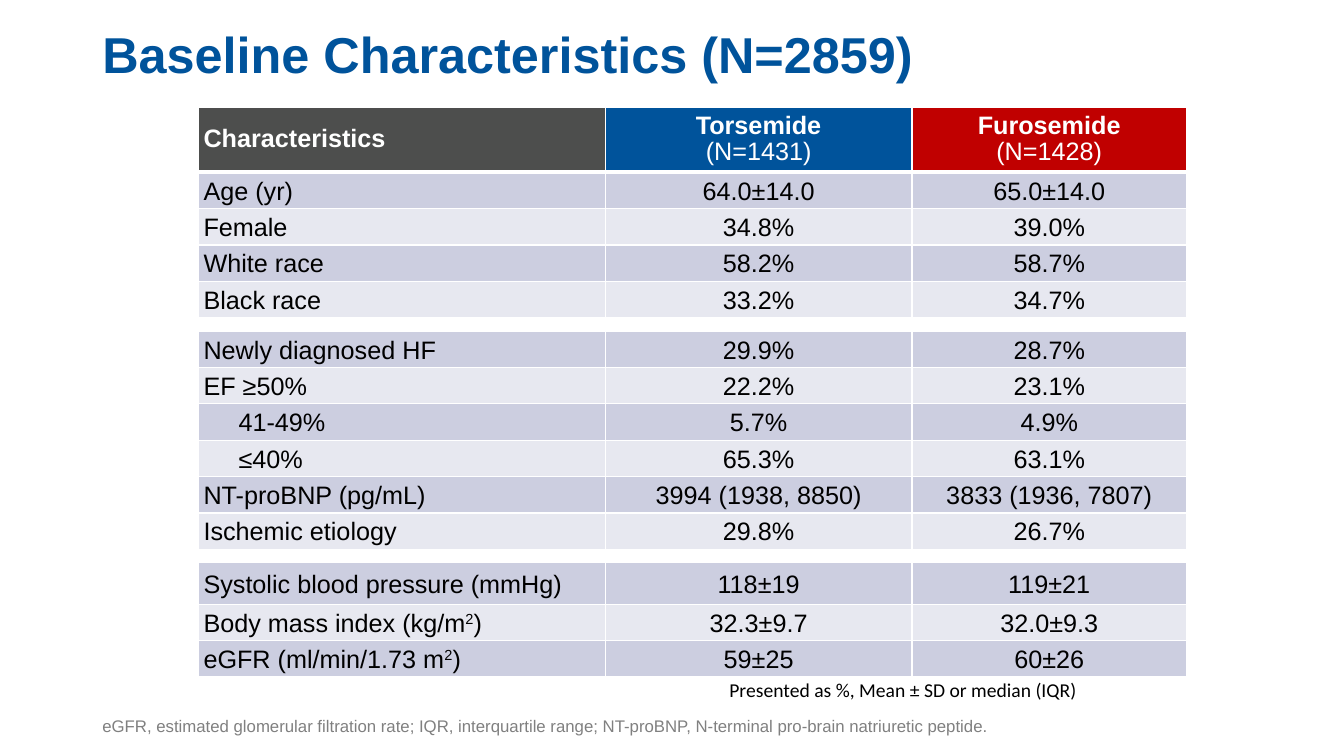
from lxml.etree import SubElement
from pptx import Presentation
from pptx.dml.color import RGBColor
from pptx.enum.text import MSO_ANCHOR as Anchor, PP_ALIGN as Align
from pptx.oxml.ns import qn
from pptx.util import Pt

WHITE = RGBColor(0xFF, 0xFF, 0xFF)
BLACK = RGBColor(0, 0, 0)
GRAY = RGBColor(0x80, 0x80, 0x80)
CHARCOAL = RGBColor(0x4D, 0x4E, 0x4D)
BLUE = RGBColor(0x00, 0x53, 0x9B)
RED = RGBColor(0xC0, 0x00, 0x00)
BANDS = (RGBColor(0xCC, 0xCE, 0xE0), RGBColor(0xE7, 0xE8, 0xF0))

TABLE_LEFT = 141.8
COLUMN_WIDTHS = (290.5, 219.2, 196)
ROW_HEIGHT = 26
CELL_MARGIN = 3.6
SUBGROUP_MARGIN = CELL_MARGIN + 25

HEADER = (
    (("Characteristics",), CHARCOAL),
    (("Torsemide", "(N=1431)"), BLUE),
    (("Furosemide", "(N=1428)"), RED),
)
DEMOGRAPHICS = (
    ("Age (yr)", "64.0±14.0", "65.0±14.0"),
    ("Female", "34.8%", "39.0%"),
    ("White race", "58.2%", "58.7%"),
    ("Black race", "33.2%", "34.7%"),
)
HEART_FAILURE = (
    ("Newly diagnosed HF", "29.9%", "28.7%"),
    ("EF ≥50%", "22.2%", "23.1%"),
    ("41-49%", "5.7%", "4.9%"),
    ("≤40%", "65.3%", "63.1%"),
    ("NT-proBNP (pg/mL)", "3994 (1938, 8850)", "3833 (1936, 7807)"),
    ("Ischemic etiology", "29.8%", "26.7%"),
)
EF_SUBGROUPS = ("41-49%", "≤40%")
MEASUREMENTS = (
    ("Systolic blood pressure (mmHg)", "118±19", "119±21"),
    ("Body mass index (kg/m^2^)", "32.3±9.7", "32.0±9.3"),
    ("eGFR (ml/min/1.73 m^2^)", "59±25", "60±26"),
)


def apply_format(target, **values):
    for name, value in values.items():
        setattr(target, name, value)


def add_run(paragraph, text, color, size=18, name="Arial", bold=False):
    run = paragraph.add_run()
    run.text = text
    apply_format(run.font, size=Pt(size), name=name, bold=bold)
    run.font.color.rgb = color
    return run


def add_text(slide, text, box, color, size, name="Arial", bold=False,
             anchor=Anchor.BOTTOM, **paragraph_format):
    frame = slide.shapes.add_textbox(*map(Pt, box)).text_frame
    apply_format(frame, word_wrap=True, vertical_anchor=anchor)
    paragraph = frame.paragraphs[0]
    apply_format(paragraph, **paragraph_format)
    add_run(paragraph, text, color, size, name, bold)


def add_borders(cell, bottom_width):
    properties = cell._tc.get_or_add_tcPr()
    for side, width in (("L", 1), ("R", 1), ("T", 1), ("B", bottom_width)):
        line = SubElement(properties, qn(f"a:ln{side}"), w=str(Pt(width)))
        fill = SubElement(line, qn("a:solidFill"))
        SubElement(fill, qn("a:srgbClr"), val=str(WHITE))


def prepare_cell(cell, column, fill, line_spacing, bottom_width=1):
    """Set borders, fill and margins, and return the formatted paragraph."""
    add_borders(cell, bottom_width)
    cell.fill.solid()
    cell.fill.fore_color.rgb = fill
    apply_format(cell, vertical_anchor=Anchor.MIDDLE,
                 margin_left=Pt(CELL_MARGIN), margin_right=Pt(CELL_MARGIN),
                 margin_top=0, margin_bottom=0)
    paragraph = cell.text_frame.paragraphs[0]
    apply_format(paragraph, alignment=Align.CENTER if column else Align.LEFT,
                 line_spacing=line_spacing, space_after=Pt(8))
    return paragraph


def fill_header(table):
    for column, (lines, color) in enumerate(HEADER):
        paragraph = prepare_cell(table.cell(0, column), column, color, 0.9, 3)
        for index, line in enumerate(lines):
            if index:
                paragraph.add_line_break()
            add_run(paragraph, line, WHITE, bold=index == 0)


def fill_body_cell(cell, text, column, fill):
    """Write the text, raising the parts enclosed in ^."""
    paragraph = prepare_cell(cell, column, fill, 1.07)
    if text in EF_SUBGROUPS:
        cell.margin_left = Pt(SUBGROUP_MARGIN)
    for index, part in enumerate(text.split("^")):
        run = add_run(paragraph, part, BLACK)
        if index % 2:
            run._r.get_or_add_rPr().set("baseline", "30000")


def add_data_table(slide, top, rows, first_height=ROW_HEIGHT, header=False):
    row_count = len(rows) + header
    heights = [first_height] + [ROW_HEIGHT] * (row_count - 1)
    table = slide.shapes.add_table(
        row_count, len(COLUMN_WIDTHS), Pt(TABLE_LEFT), Pt(top),
        Pt(sum(COLUMN_WIDTHS)), Pt(sum(heights))).table
    apply_format(table, first_row=False, horz_banding=False)
    for column, width in zip(table.columns, COLUMN_WIDTHS):
        column.width = Pt(width)
    for row, height in zip(table.rows, heights):
        row.height = Pt(height)
    if header:
        fill_header(table)
    for index, texts in enumerate(rows):
        for column, text in enumerate(texts):
            fill_body_cell(table.cell(index + header, column), text, column,
                           BANDS[index % 2])


def main():
    presentation = Presentation()
    apply_format(presentation, slide_width=Pt(960), slide_height=Pt(540))
    slide = presentation.slides.add_slide(presentation.slide_layouts[6])
    add_data_table(slide, 77, DEMOGRAPHICS, first_height=46, header=True)
    add_text(slide, "Baseline Characteristics (N=2859)", (66, 0, 828, 64),
             BLUE, 36, bold=True, line_spacing=0.9)
    add_text(slide, "Presented as %, Mean ± SD or median (IQR)",
             (292.3, 481, 705.6, 24.5), BLACK, 14, "Calibri",
             anchor=Anchor.TOP, alignment=Align.CENTER)
    add_data_table(slide, 236.5, HEART_FAILURE)
    add_data_table(slide, 401.8, MEASUREMENTS, first_height=29.8)
    add_text(slide, "eGFR, estimated glomerular filtration rate; "
             "IQR, interquartile range; "
             "NT-proBNP, N-terminal pro-brain natriuretic peptide.",
             (66, 500.4, 700.6, 28.8), GRAY, 12)
    presentation.save("out.pptx")


if __name__ == "__main__":
    main()
